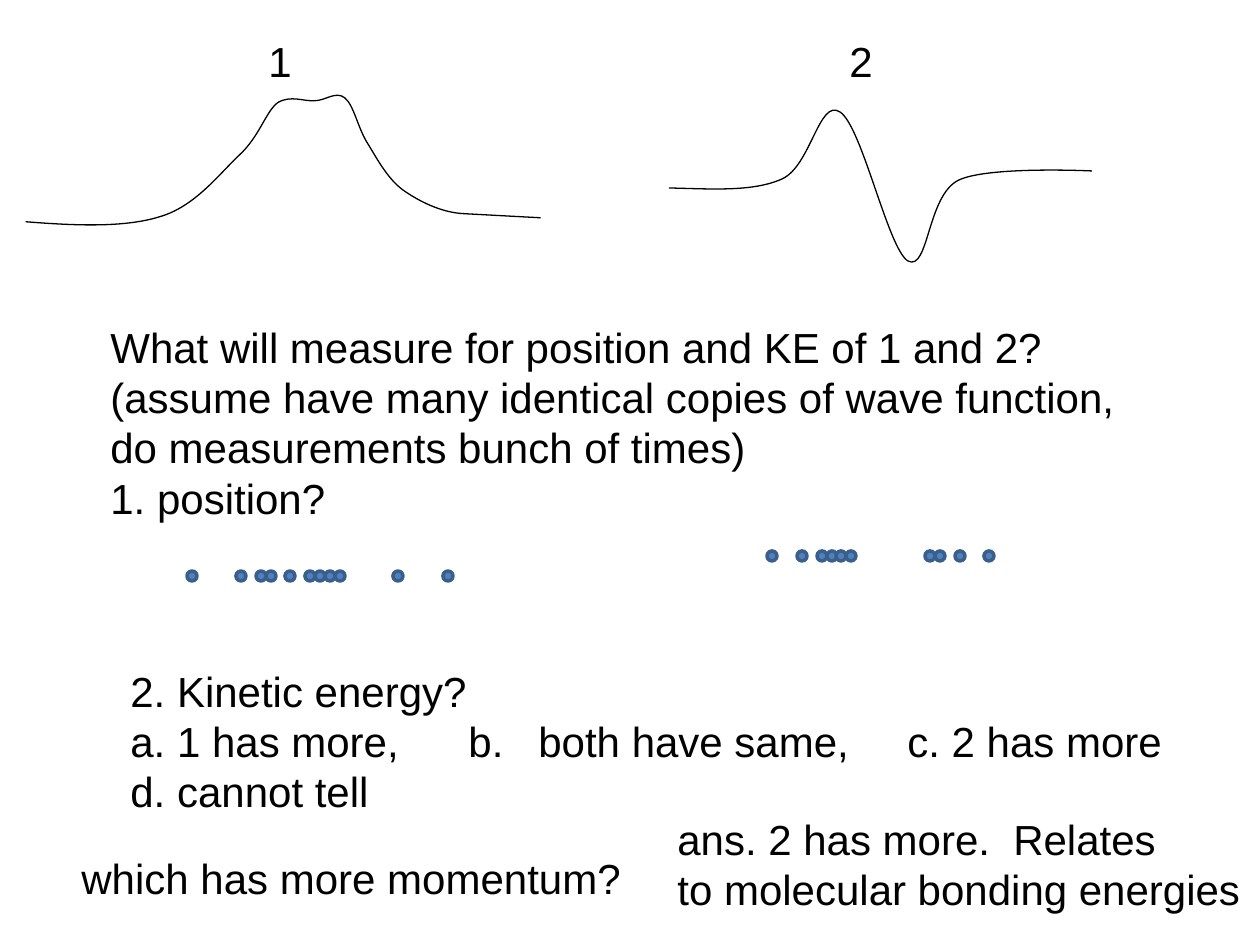
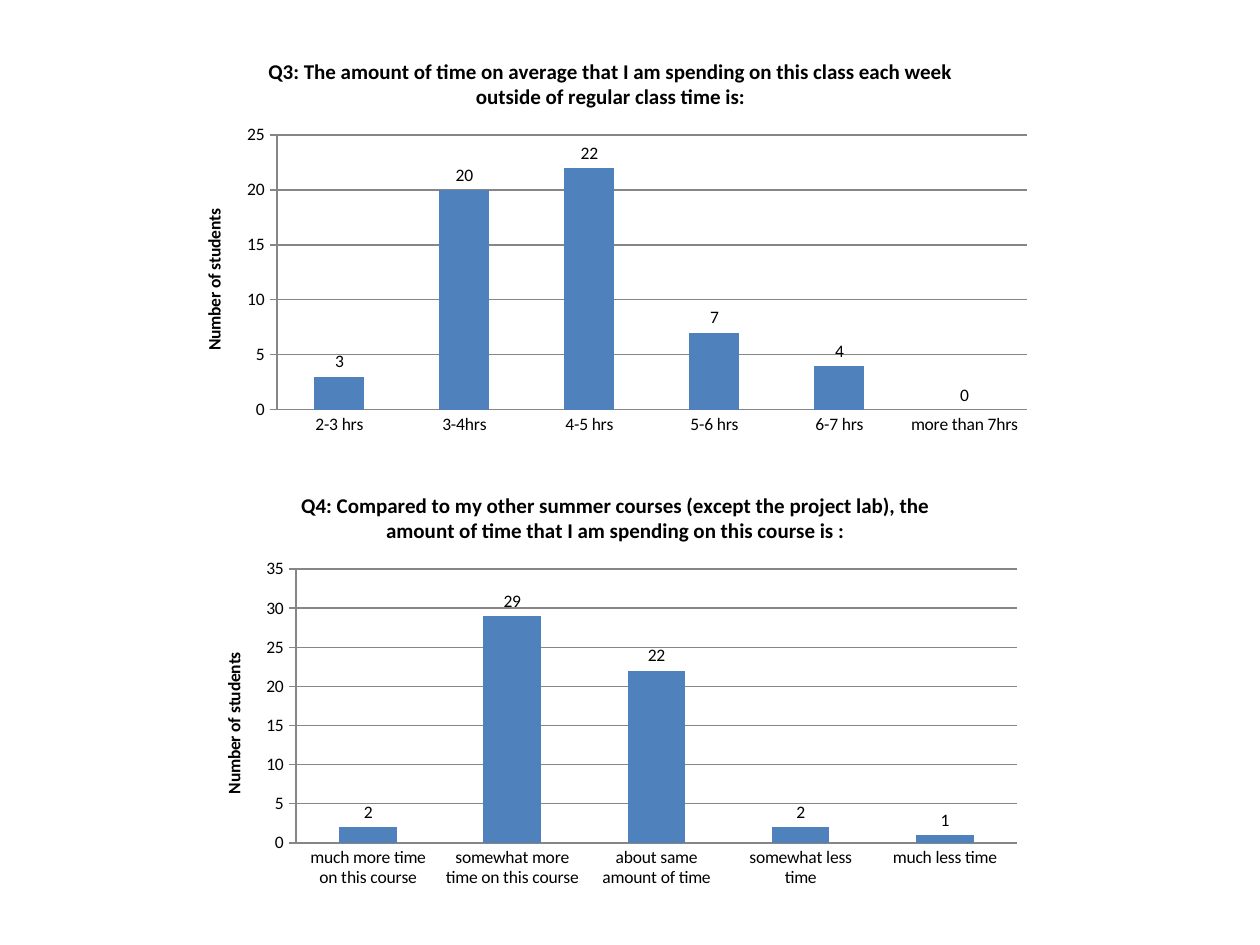
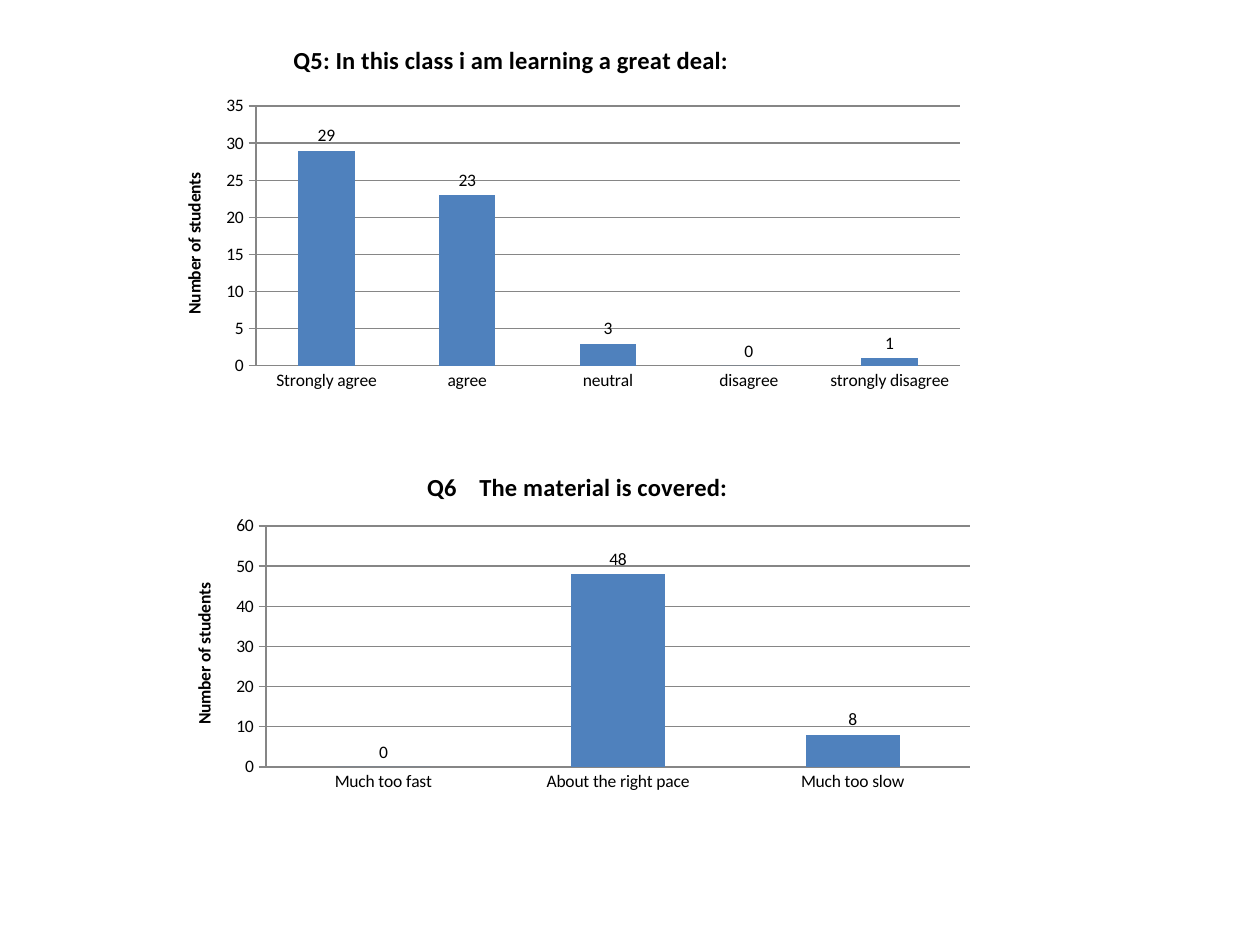
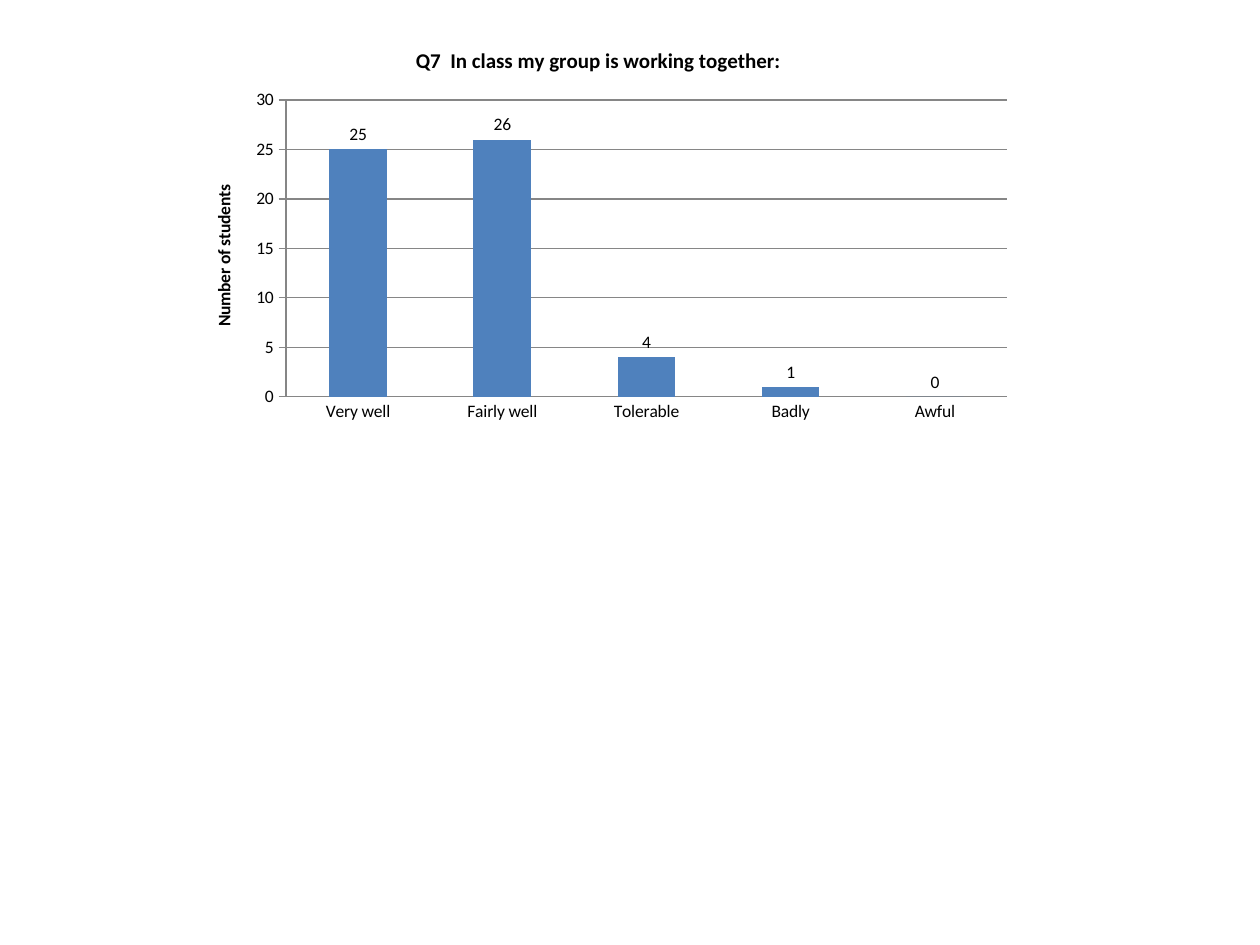
import math
from lxml import etree
from pptx import Presentation
from pptx import util as u
from pptx.chart.data import CategoryChartData
from pptx.dml.color import RGBColor
from pptx.enum import chart as ch
from pptx.enum import shapes, text
from pptx.oxml.ns import qn

PX = 914400 / 126
COLORS = {"ink": "000000", "blue": "4F81BD", "dot_edge": "3A5F8C", "grid": "868686"}
TEXT_FONT, CHART_FONT = "Arial", "Calibri"
AXIS_TITLE = "Number of students"

# Content: wave functions as (start, segments, tilt in degrees);
# a segment of three points is a cubic curve, of one point a line
WAVES = [
    ((669, 188), [
        ((712, 189), (753, 192), (782, 179)),
        ((811, 166), (819, 98), (840, 112)),
        ((862, 126), (888, 249), (908, 261)),
        ((929, 272), (927, 195), (959, 180)),
        ((989, 166), (1092, 171), (1092, 171)),
    ], 0),
    ((26, 222), [
        ((76, 226), (125, 228), (160, 217)),
        ((195, 207), (219, 175), (239, 156)),
        ((260, 137), (266, 112), (278, 103)),
        ((291, 95), (305, 102), (315, 101)),
        ((326, 101), (336, 91), (345, 98)),
        ((354, 105), (358, 127), (367, 142)),
        ((377, 158), (387, 178), (403, 190)),
        ((420, 202), (442, 213), (465, 214)),
        ((541, 218),),
    ], -3.7),
]
WAVE_GRAIN = 100  # path units per px

# Measured positions: (centre y, centres x)
DOT = 10
MEASUREMENTS = [
    (576, [192, 241, 261, 271, 290, 310, 320, 330, 340, 398, 448]),
    (556, [772, 802, 822, 832, 841, 851, 930, 940, 960, 989]),
]

# Texts: (left, top, width, height), lines
TEXTS = [
    ((256, 29, 49, 63), ["1"]),
    ((837, 29, 49, 63), ["2"]),
    ((98, 315, 1040, 267), [
        "What will measure for position and KE of 1 and 2?",
        "(assume have many identical copies of wave function,",
        "do measurements bunch of times)",
        "1. position?"]),
    ((118, 659, 1066, 165), [
        "2. Kinetic energy?",
        "a. 1 has more,\tb.\tboth have same,\tc. 2 has more",
        "d. cannot tell"]),
    ((69, 846, 571, 63), ["which has more momentum?"]),
    ((665, 807, 595, 115), [
        "ans. 2 has more.  Relates",
        "to molecular bonding energies"]),
]
ANSWER_TABS = [338, 408, 777]

# Survey slides; frame and plot are (left, top, width, height)
SURVEY = [
    [
        {"title": "Q3: The amount of time on average that I am spending on this class "
                  "each week outside of regular class time is:",
         "size": 12, "frame": (177, 39, 867, 403), "plot": (277, 135, 750, 275),
         "top": 25, "step": 5,
         "answers": [("2-3 hrs", 3), ("3-4hrs", 20), ("4-5 hrs", 22),
                     ("5-6 hrs", 7), ("6-7 hrs", 4), ("more than 7hrs", 0)]},
        {"title": "Q4: Compared to my other summer courses (except the project lab), "
                  "the amount of time that I am spending on this course is :",
         "size": 12, "frame": (197, 472, 837, 423), "plot": (296, 569, 721, 274),
         "top": 35, "step": 5,
         "answers": [("much more time on this course", 2),
                     ("somewhat more time on this course", 29),
                     ("about same amount of time", 22),
                     ("somewhat less time", 2), ("much less time", 1)]},
    ],
    [
        {"title": "Q5: In this class i am learning a great deal:",
         "size": 14, "frame": (157, 29, 819, 368), "plot": (256, 106, 704, 260),
         "title_at": (289, 38), "top": 35, "step": 5,
         "answers": [("Strongly agree", 29), ("agree", 23), ("neutral", 3),
                     ("disagree", 0), ("strongly disagree", 1)]},
        {"title": "Q6    The material is covered:",
         "size": 14, "frame": (168, 452, 819, 345), "plot": (266, 526, 704, 241),
         "top": 60, "step": 10,
         "answers": [("Much too fast", 0), ("About the right pace", 48),
                     ("Much too slow", 8)]},
    ],
    [
        {"title": "Q7  In class my group is working together:",
         "size": 12, "frame": (186, 29, 837, 399), "plot": (286, 100, 721, 297),
         "title_at": (412, 42), "top": 30, "step": 5,
         "answers": [("Very well", 25), ("Fairly well", 26), ("Tolerable", 4),
                     ("Badly", 1), ("Awful", 0)]},
    ],
]


def px(value):
    return u.Emu(round(value * PX))


def box(rect):
    return [px(v) for v in rect]


def color(name):
    return RGBColor.from_string(COLORS[name])


def outline(line, name, points):
    line.color.rgb = color(name)
    line.width = u.Pt(points)


def style_font(font, name, size, bold=False):
    font.name, font.size, font.bold = name, u.Pt(size), bold
    font.color.rgb = color("ink")


def turn(points, degrees):
    """Rotate points about the middle of their extent."""
    cx, cy = ((min(axis) + max(axis)) / 2 for axis in zip(*points))
    cos, sin = math.cos(math.radians(degrees)), math.sin(math.radians(degrees))
    return [(cx + (x - cx) * cos - (y - cy) * sin,
             cy + (x - cx) * sin + (y - cy) * cos) for x, y in points]


def bend(wave, segments):
    """Join the straight steps of each three-point segment into one curve."""
    steps = iter(list(wave._element.iter(qn("a:lnTo"))))
    for segment in segments:
        group = [next(steps) for _ in segment]
        if len(group) == 3:
            curve = etree.Element(qn("a:cubicBezTo"))
            group[0].addprevious(curve)
            for step in group:
                curve.append(step[0])
                step.getparent().remove(step)


def add_wave(slide, start, segments, tilt):
    points = [start] + [point for segment in segments for point in segment]
    points = [(x * WAVE_GRAIN, y * WAVE_GRAIN) for x, y in turn(points, -tilt)]
    builder = slide.shapes.build_freeform(*points[0], scale=PX / WAVE_GRAIN)
    builder.add_line_segments(points[1:], close=False)
    wave = builder.convert_to_shape()
    bend(wave, segments)
    wave.rotation = tilt % 360
    wave.fill.background()
    outline(wave.line, "ink", 0.75)
    wave.shadow.inherit = False


def add_measurements(slide, y, centres):
    group = slide.shapes.add_group_shape()
    for x in centres:
        dot = group.shapes.add_shape(
            shapes.MSO_SHAPE.OVAL, *box((x - DOT / 2, y - DOT / 2, DOT, DOT)))
        dot.fill.solid()
        dot.fill.fore_color.rgb = color("blue")
        outline(dot.line, "dot_edge", 2)
        dot.shadow.inherit = False


def set_tabs(paragraph, stops):
    tabs = etree.SubElement(paragraph._p.get_or_add_pPr(), qn("a:tabLst"))
    for stop in stops:
        etree.SubElement(tabs, qn("a:tab"), pos=str(px(stop)), algn="l")


def add_text(slide, rect, lines):
    frame = slide.shapes.add_textbox(*box(rect)).text_frame
    frame.word_wrap = False
    frame.auto_size = text.MSO_AUTO_SIZE.SHAPE_TO_FIT_TEXT
    frame.text = "\n".join(lines)
    for paragraph in frame.paragraphs:
        if "\t" in paragraph.text:
            set_tabs(paragraph, ANSWER_TABS)
        for run in paragraph.runs:
            style_font(run.font, TEXT_FONT, 24)


def set_layout(parent, index, **settings):
    """Give a chart part a manual place."""
    for old in parent.findall(qn("c:layout")):
        parent.remove(old)
    layout = etree.Element(qn("c:layout"))
    manual = etree.SubElement(layout, qn("c:manualLayout"))
    for tag, value in settings.items():
        etree.SubElement(manual, qn("c:" + tag), val=str(value))
    parent.insert(index, layout)


def set_title(owner, words, size):
    owner.text_frame.text = words
    style_font(owner.text_frame.paragraphs[0].runs[0].font, CHART_FONT, size, True)


def add_question(slide, question):
    data = CategoryChartData()
    data.categories = [answer for answer, _ in question["answers"]]
    data.add_series("Series 1", [count for _, count in question["answers"]])
    chart = slide.shapes.add_chart(
        ch.XL_CHART_TYPE.COLUMN_CLUSTERED, *box(question["frame"]), data).chart
    style_font(chart.font, CHART_FONT, 10)
    chart.has_legend = False
    chart.has_title = True
    set_title(chart.chart_title, question["title"], question["size"])

    # Axes
    answers, students = chart.category_axis, chart.value_axis
    answers.major_tick_mark = ch.XL_TICK_MARK.NONE
    students.major_tick_mark = ch.XL_TICK_MARK.CROSS
    students.minimum_scale, students.maximum_scale = 0, question["top"]
    students.major_unit = question["step"]
    students.has_major_gridlines = True
    for part in (answers, students, students.major_gridlines):
        outline(part.format.line, "grid", 0.75)
    students.has_title = True
    set_title(students.axis_title, AXIS_TITLE, 10)

    # Columns and their values
    plot = chart.plots[0]
    plot.gap_width = 150
    plot.vary_by_categories = False
    columns = plot.series[0]
    columns.format.fill.solid()
    columns.format.fill.fore_color.rgb = color("blue")
    labels = columns.data_labels
    labels.show_value = True
    labels.position = ch.XL_LABEL_POSITION.OUTSIDE_END
    style_font(labels.font, CHART_FONT, 10)

    # Places as shares of the chart frame
    left, top, width, height = question["frame"]
    x, y, w, h = question["plot"]
    set_layout(chart._chartSpace.chart.plotArea, 0,
               layoutTarget="inner", xMode="edge", yMode="edge",
               x=round((x - left) / width, 4), y=round((y - top) / height, 4),
               w=round(w / width, 4), h=round(h / height, 4))
    if "title_at" in question:
        x, y = question["title_at"]
        set_layout(chart._chartSpace.chart.find(qn("c:title")), 1,
                   xMode="edge", yMode="edge",
                   x=round((x - left) / width, 4), y=round((y - top) / height, 4))


def main():
    deck = Presentation()
    deck.slide_width, deck.slide_height = px(1260), px(945)
    blank = deck.slide_layouts[6]

    # Wave function question
    slide = deck.slides.add_slide(blank)
    for wave in WAVES:
        add_wave(slide, *wave)
    for rect, lines in TEXTS[:3]:
        add_text(slide, rect, lines)
    for y, centres in MEASUREMENTS:
        add_measurements(slide, y, centres)
    for rect, lines in TEXTS[3:]:
        add_text(slide, rect, lines)

    # Survey results
    for questions in SURVEY:
        slide = deck.slides.add_slide(blank)
        for question in questions:
            add_question(slide, question)

    deck.save("out.pptx")


if __name__ == "__main__":
    main()
